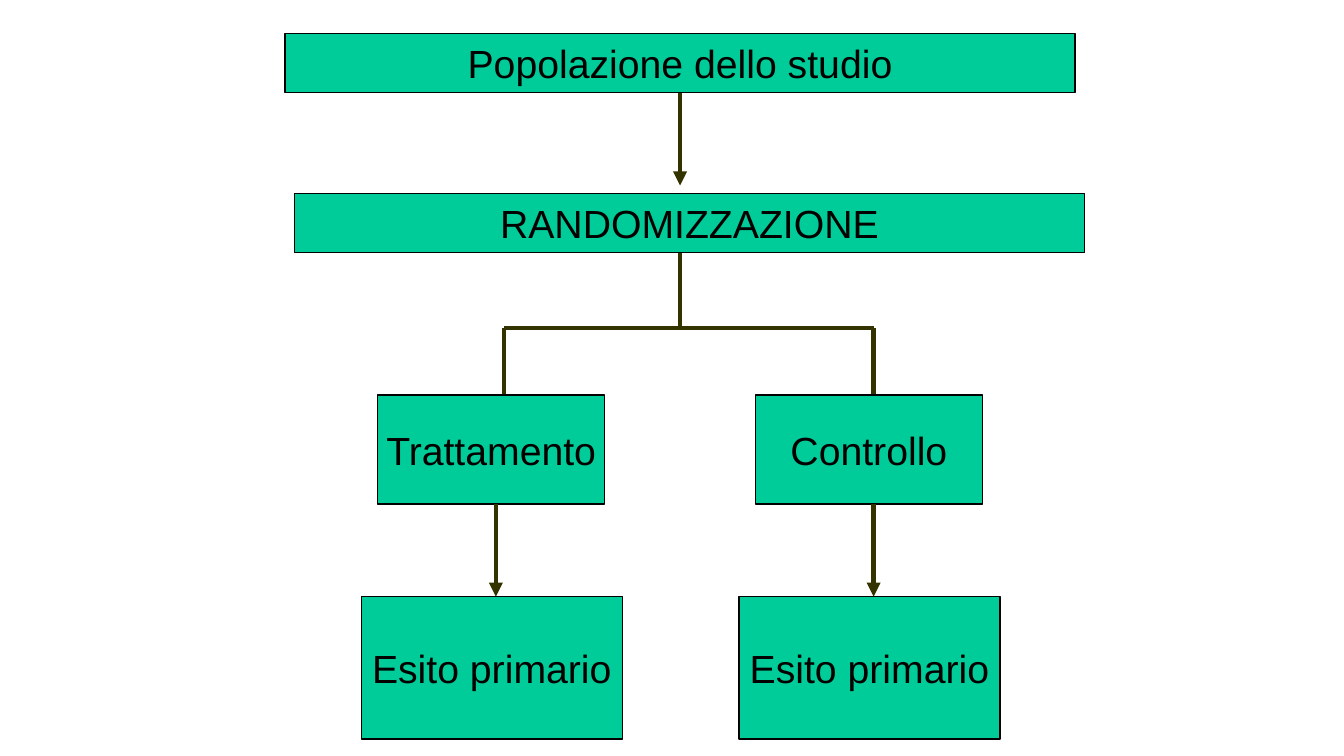
"""Build a flow chart of a randomised study with two arms."""
from lxml import etree
from pptx import Presentation
from pptx.dml.color import RGBColor
from pptx.enum.shapes import MSO_CONNECTOR, MSO_SHAPE
from pptx.enum.text import MSO_ANCHOR, PP_ALIGN
from pptx.oxml.ns import qn
from pptx.util import Inches, Pt

RECTANGLE = MSO_SHAPE.RECTANGLE
STRAIGHT = MSO_CONNECTOR.STRAIGHT
MIDDLE = MSO_ANCHOR.MIDDLE
CENTER = PP_ALIGN.CENTER

GREEN = RGBColor(0x00, 0xCC, 0x99)
OLIVE = RGBColor(0x33, 0x33, 0x00)
BLACK = RGBColor(0x00, 0x00, 0x00)

BOTTOM_SIDE = 2
ARM_PITCH = 2.81
TRUNK_X = 5.06
BRANCH_Y = 2.44
BRANCH_XS = (3.75, 6.5)
ARMS = ("Trattamento", "Controllo")


def add_step(slide, label, left, top, width, height):
    """Add a labelled box for one step of the study."""
    step = slide.shapes.add_shape(
        RECTANGLE, Inches(left), Inches(top), Inches(width), Inches(height))
    step.shadow.inherit = False
    step.fill.solid()
    step.fill.fore_color.rgb = GREEN
    step.line.color.rgb = BLACK
    step.line.width = Pt(0.75)
    frame = step.text_frame
    frame.word_wrap = False
    frame.vertical_anchor = MIDDLE
    paragraph = frame.paragraphs[0]
    paragraph.text = label
    paragraph.alignment = CENTER
    paragraph.font.name = "Arial"
    paragraph.font.size = Pt(21)
    paragraph.font.color.rgb = BLACK
    return step


def add_link(slide, start, end, arrow=False):
    """Add a straight link between two points, with an arrowhead if asked."""
    link = slide.shapes.add_connector(
        STRAIGHT, *(Inches(length) for length in (*start, *end)))
    link.line.color.rgb = OLIVE
    link.line.width = Pt(2.5)
    if arrow:
        etree.SubElement(link.line._get_or_add_ln(), qn("a:tailEnd"), type="triangle")
    etree.SubElement(link._element.spPr, qn("a:effectLst"))
    return link


def add_arm(slide, index, treatment, branch_x):
    """Add one arm of the study, from its branch down to its outcome."""
    shift = index * ARM_PITCH
    add_link(slide, (branch_x, BRANCH_Y), (branch_x, 2.94))
    add_step(slide, treatment, 2.81 + shift, 2.94, 1.69, 0.81)
    add_link(slide, (3.69 + shift, 3.75), (3.69 + shift, 4.44), arrow=True)
    add_step(slide, "Esito primario", 2.69 + shift, 4.44, 1.94, 1.06)


def main():
    """Build the slide and save it."""
    presentation = Presentation()
    presentation.slide_width = Inches(10)
    presentation.slide_height = presentation.slide_width * 9 // 16
    slide = presentation.slides.add_slide(presentation.slide_layouts[6])

    population = add_step(slide, "Popolazione dello studio", 2.12, 0.25, 5.88, 0.44)
    enrolment = add_link(slide, (TRUNK_X, 0.69), (TRUNK_X, 1.38), arrow=True)
    enrolment.begin_connect(population, BOTTOM_SIDE)
    add_step(slide, "RANDOMIZZAZIONE", 2.19, 1.44, 5.88, 0.44)
    add_link(slide, (TRUNK_X, 1.88), (TRUNK_X, BRANCH_Y))
    add_link(slide, *((branch_x, BRANCH_Y) for branch_x in BRANCH_XS))
    for index, (treatment, branch_x) in enumerate(zip(ARMS, BRANCH_XS)):
        add_arm(slide, index, treatment, branch_x)

    presentation.save("out.pptx")


if __name__ == "__main__":
    main()
